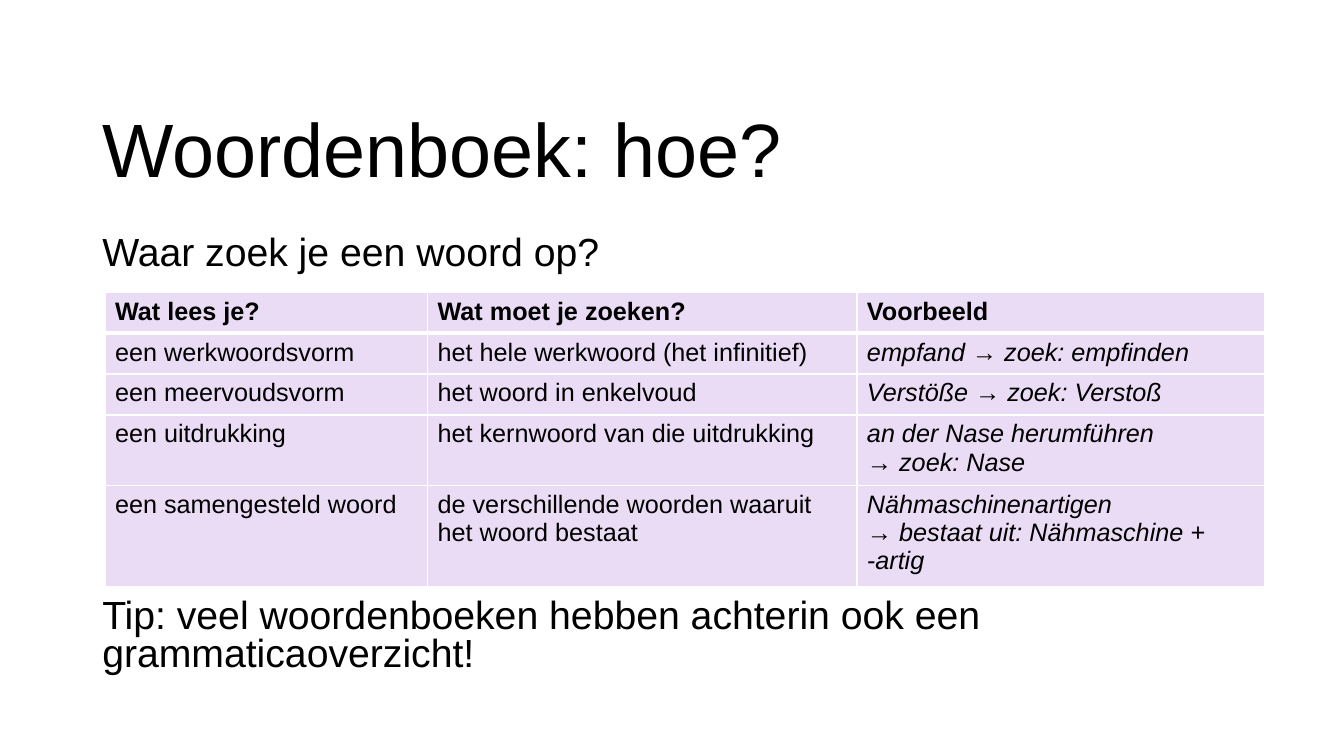
from lxml.etree import SubElement
from pptx import Presentation
from pptx.dml.color import RGBColor
from pptx.enum.text import MSO_ANCHOR
from pptx.oxml.ns import qn
from pptx.util import Pt

BLACK = RGBColor(0x00, 0x00, 0x00)
WHITE = RGBColor(0xFF, 0xFF, 0xFF)
LILAC = RGBColor(0xEA, 0xDC, 0xF4)

COLUMN_WIDTHS = [230.4, 306.7, 290.9]
ROW_HEIGHTS = [29.2, 29.2, 29.2, 47.1, 67.5]
ROWS = [
    ["Wat lees je?", "Wat moet je zoeken?", "Voorbeeld"],
    ["een werkwoordsvorm", "het hele werkwoord (het infinitief)",
     "empfand → zoek: empfinden"],
    ["een meervoudsvorm", "het woord in enkelvoud",
     "Verstöße → zoek: Verstoß"],
    ["een uitdrukking", "het kernwoord van die uitdrukking",
     "an der Nase herumführen\n→ zoek: Nase"],
    ["een samengesteld woord",
     "de verschillende woorden waaruit het woord bestaat",
     "Nähmaschinenartigen\n→ bestaat uit: Nähmaschine + -artig"],
]


def style_text(frame, size, spacing=None, bold=False, italic=False):
    frame.word_wrap = True
    for para in frame.paragraphs:
        para.line_spacing = spacing
        for span in para.runs:
            font = span.font
            font.name = "Arial"
            font.size = Pt(size)
            font.bold = bold
            font.italic = italic
            font.color.rgb = BLACK


def add_title(page, left, top, width, height):
    box = page.shapes.add_textbox(Pt(left), Pt(top), Pt(width), Pt(height))
    frame = box.text_frame
    frame.text = "Woordenboek: hoe?"
    frame.vertical_anchor = MSO_ANCHOR.MIDDLE
    style_text(frame, 54, 0.9)


def add_body(page, left, top, width, height, table_gap):
    box = page.shapes.add_textbox(Pt(left), Pt(top), Pt(width), Pt(height))
    frame = box.text_frame
    frame.text = ("Waar zoek je een woord op?\n"
                  "Tip: veel woordenboeken hebben achterin ook een "
                  "grammaticaoverzicht!")
    style_text(frame, 28, 0.8)
    frame.paragraphs[1].space_before = Pt(table_gap)


def set_borders(cell, top, bottom):
    properties = cell._tc.get_or_add_tcPr()
    widths = {"a:lnL": 1, "a:lnR": 1, "a:lnT": top, "a:lnB": bottom}
    for tag, width in widths.items():
        line = SubElement(properties, qn(tag), w=str(Pt(width)))
        fill = SubElement(line, qn("a:solidFill"))
        SubElement(fill, qn("a:srgbClr"), val=str(WHITE))


def add_word_table(page, left, top):
    frame = page.shapes.add_table(
        len(ROWS), len(COLUMN_WIDTHS), Pt(left), Pt(top),
        Pt(sum(COLUMN_WIDTHS)), Pt(sum(ROW_HEIGHTS)))
    table = frame.table
    for column, width in zip(table.columns, COLUMN_WIDTHS):
        column.width = Pt(width)
    for index, (row, height, texts) in enumerate(
            zip(table.rows, ROW_HEIGHTS, ROWS)):
        row.height = Pt(height)
        header = index == 0
        for column, (cell, text) in enumerate(zip(row.cells, texts)):
            cell.text_frame.text = text
            style_text(cell.text_frame, 18, bold=header,
                       italic=column == 2 and not header)
            set_borders(cell, 3 if index == 1 else 1, 3 if header else 1)
            cell.fill.solid()
            cell.fill.fore_color.rgb = LILAC


def main():
    deck = Presentation()
    deck.slide_width = Pt(960)
    deck.slide_height = Pt(540)
    page = deck.slides.add_slide(deck.slide_layouts[6])
    add_title(page, 66, 66, 828, 86)
    add_body(page, 66, 165, 828, 336, 233)
    add_word_table(page, 75, 208.8)
    deck.save("out.pptx")


if __name__ == "__main__":
    main()
